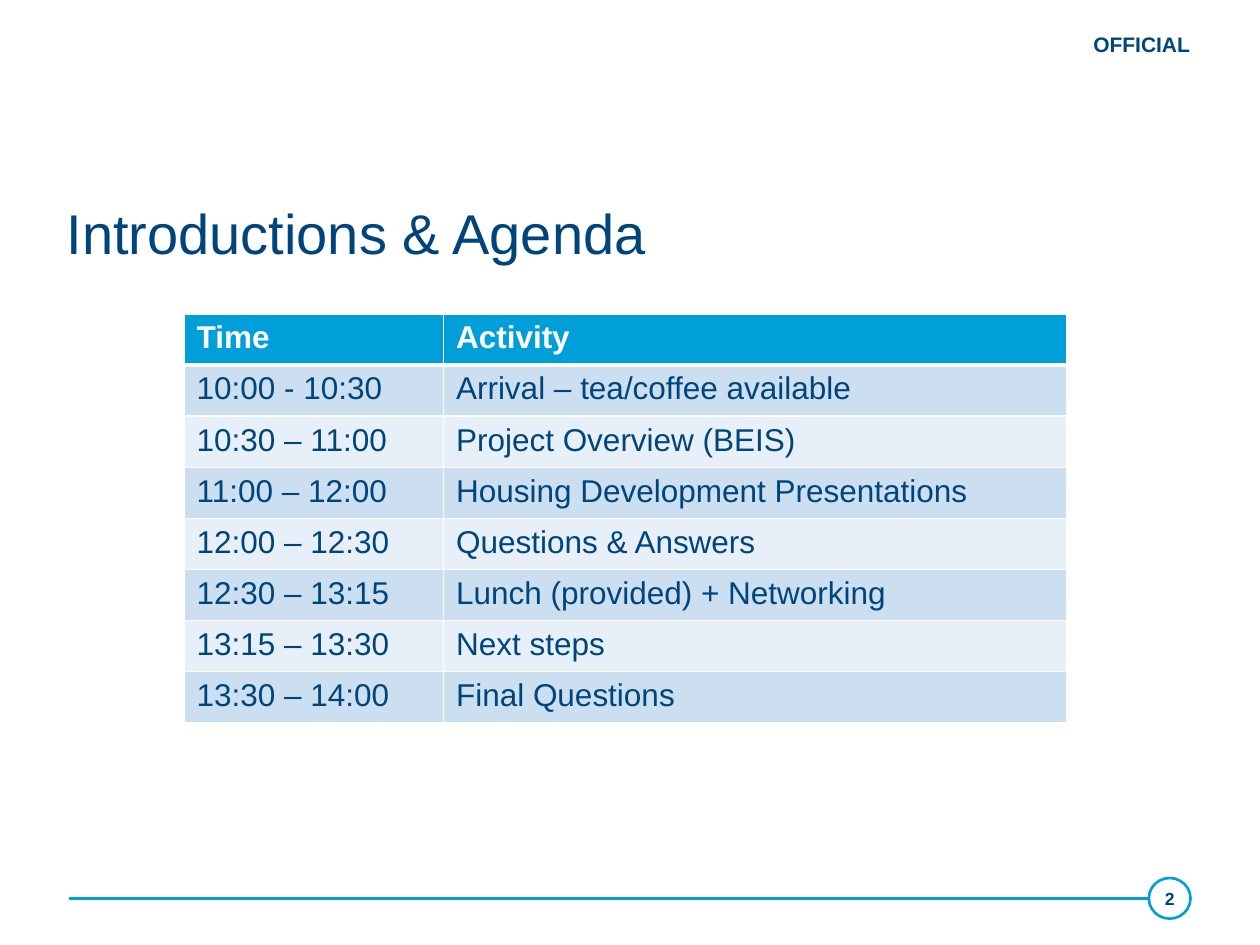
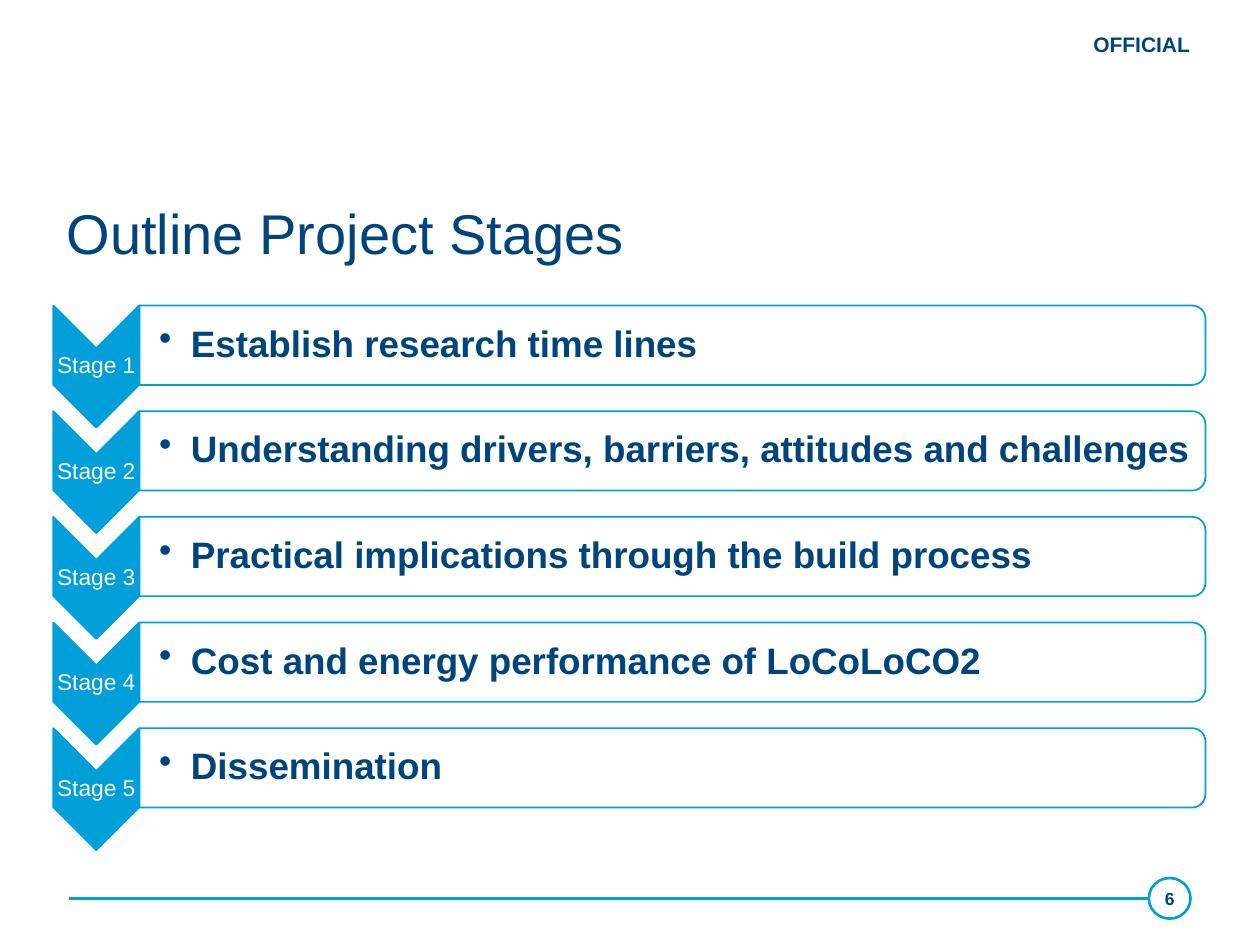
"""Build the agenda and project stages slides."""
from lxml import etree
from pptx import Presentation
from pptx.dml.color import RGBColor
from pptx.enum.shapes import MSO_CONNECTOR as Connector, MSO_SHAPE as Shape
from pptx.enum.text import MSO_ANCHOR as Anchor, MSO_AUTO_SIZE as AutoSize, PP_ALIGN as Align
from pptx.oxml.ns import qn
from pptx.util import Cm, Pt

COLOURS = {"navy": "00447C", "cyan": "009FDA", "white": "FFFFFF",
           "band": "CCDFF1", "pale": "E7F0F8"}
FONT = "Arial"
MARKING = "OFFICIAL"

AGENDA_TITLE, AGENDA_NUMBER = "Introductions & Agenda", "2"
AGENDA = [
    ("Time", "Activity"),
    ("10:00 - 10:30", "Arrival – tea/coffee available"),
    ("10:30 – 11:00", "Project Overview (BEIS)"),
    ("11:00 – 12:00", "Housing Development Presentations"),
    ("12:00 – 12:30", "Questions & Answers"),
    ("12:30 – 13:15", "Lunch (provided) + Networking"),
    ("13:15 – 13:30", "Next steps"),
    ("13:30 – 14:00", "Final Questions"),
]
AGENDA_LEFT, AGENDA_TOP, AGENDA_ROW = 3.71, 6.33, 1.03
AGENDA_WIDTHS = (5.23, 12.57)

STAGES_TITLE, STAGES_NUMBER = "Outline Project Stages", "6"
STAGES = [
    "Establish research time lines",
    "Understanding drivers, barriers, attitudes and challenges",
    "Practical implications through the build process",
    "Cost and energy performance of LoCoLoCO2",
    "Dissemination",
]
STAGE_MIDDLE, STAGE_PITCH = 6.96, 2.13
CHEVRON_MIDDLE, CHEVRON_DROP = 1.94, 0.43
CHEVRON_WIDTH, CHEVRON_LENGTH = 1.73, 2.46
BAR_LEFT, BAR_HEIGHT, BAR_LENGTH = 2.81, 1.6, 21.49
STAGE_INSET, BULLET_INDENT = 0.03, 0.64


def rgb(name):
    return RGBColor.from_string(COLOURS[name])


def style(paragraph, size, colour="navy", bold=False):
    for run in paragraph.runs:
        run.font.name, run.font.size, run.font.bold = FONT, Pt(size), bold
        run.font.color.rgb = rgb(colour)


def add_text(slide, text, box, size, colour="navy", bold=False, align=Align.LEFT,
             anchor=Anchor.MIDDLE, insets=(0.1, 0.13, 0.1, 0.13), wrap=True):
    frame = slide.shapes.add_textbox(*map(Cm, box)).text_frame
    frame.word_wrap, frame.vertical_anchor = wrap, anchor
    frame.margin_left, frame.margin_top, frame.margin_right, frame.margin_bottom = map(Cm, insets)
    frame.text = text
    paragraph = frame.paragraphs[0]
    paragraph.alignment = align
    style(paragraph, size, colour, bold)
    return frame


def add_outline(slide, kind, box, fill, width):
    shape = slide.shapes.add_shape(kind, *map(Cm, box))
    shape.shadow.inherit = False
    if fill:
        shape.fill.solid()
        shape.fill.fore_color.rgb = rgb(fill)
    else:
        shape.fill.background()
    shape.line.color.rgb, shape.line.width = rgb("cyan"), Pt(width)
    return shape


def add_turned(slide, kind, middle_x, middle_y, across, along, fill):
    box = (middle_x - across / 2, middle_y - along / 2, across, along)
    shape = add_outline(slide, kind, box, fill, 1)
    shape.rotation = 90
    return shape


def add_slide(prs, title, number):
    slide = prs.slides.add_slide(prs.slide_layouts[5])
    add_outline(slide, Shape.OVAL, (23.16, 17.7, 0.84, 0.82), None, 1.5)
    rule = slide.shapes.add_connector(Connector.STRAIGHT, Cm(23.16), Cm(18.11), Cm(1.4), Cm(18.11))
    rule.line.color.rgb, rule.line.width = rgb("cyan"), Pt(1.5)
    etree.SubElement(rule._element.spPr, qn("a:effectLst"))
    marking = add_text(slide, MARKING, (21.79, 0.51, 2.49, 0.76), 12, bold=True,
                       anchor=Anchor.TOP, insets=(0.25, 0.13, 0.25, 0.13), wrap=False)
    marking.auto_size = AutoSize.SHAPE_TO_FIT_TEXT
    add_text(slide, number, (23.11, 17.83, 0.94, 0.56), 10, bold=True, align=Align.CENTER)

    heading = slide.shapes.title
    heading.left, heading.top, heading.width, heading.height = map(Cm, (1.09, 3.78, 23.22, 1.98))
    heading.text_frame.text = title
    heading.text_frame.vertical_anchor = Anchor.MIDDLE
    paragraph = heading.text_frame.paragraphs[0]
    paragraph.alignment, paragraph.line_spacing = Align.LEFT, 0.9
    style(paragraph, 32)
    return slide


def add_borders(cell, **widths):
    properties = cell._tc.get_or_add_tcPr()
    for place, side in enumerate("LRTB"):
        border = etree.Element(qn(f"a:ln{side}"), w=str(Pt(widths.get(side, 1))))
        paint = etree.SubElement(border, qn("a:solidFill"))
        etree.SubElement(paint, qn("a:srgbClr"), val=COLOURS["white"])
        properties.insert(place, border)


def add_agenda(slide):
    table = slide.shapes.add_table(
        len(AGENDA), len(AGENDA_WIDTHS), Cm(AGENDA_LEFT), Cm(AGENDA_TOP),
        Cm(sum(AGENDA_WIDTHS)), Cm(AGENDA_ROW * len(AGENDA))).table
    for column, width in zip(table.columns, AGENDA_WIDTHS):
        column.width = Cm(width)
    for index, entry in enumerate(AGENDA):
        table.rows[index].height = Cm(AGENDA_ROW)
        header = index == 0
        fill = "cyan" if header else "band" if index % 2 else "pale"
        for column, text in enumerate(entry):
            cell = table.cell(index, column)
            cell.text = text
            style(cell.text_frame.paragraphs[0], 18, "white" if header else "navy", header)
            cell.fill.solid()
            cell.fill.fore_color.rgb = rgb(fill)
            add_borders(cell, T=3 if index == 1 else 1, B=3 if header else 1)


def add_bullet(paragraph):
    properties = paragraph._p.get_or_add_pPr()
    properties.set("marL", str(Cm(BULLET_INDENT)))
    properties.set("indent", str(-Cm(BULLET_INDENT)))
    etree.SubElement(properties, qn("a:buChar"), char="•")


def add_stage(slide, index, task):
    middle = STAGE_MIDDLE + index * STAGE_PITCH
    chevron_y = middle + CHEVRON_DROP
    add_turned(slide, Shape.CHEVRON, CHEVRON_MIDDLE, chevron_y,
               CHEVRON_LENGTH, CHEVRON_WIDTH, "cyan")
    label_box = (CHEVRON_MIDDLE - CHEVRON_WIDTH / 2, chevron_y - 0.37, CHEVRON_WIDTH, 0.74)
    label = add_text(slide, f"Stage {index + 1}", label_box, 13, "white",
                     align=Align.CENTER, insets=[STAGE_INSET] * 4)
    label.paragraphs[0].line_spacing = 0.9

    bar = add_turned(slide, Shape.ROUND_2_SAME_RECTANGLE, BAR_LEFT + BAR_LENGTH / 2, middle,
                     BAR_HEIGHT, BAR_LENGTH, "white")
    paint = bar._element.spPr.find(qn("a:solidFill"))
    etree.SubElement(paint[0], qn("a:alpha"), val="90000")
    detail = add_text(slide, task, (BAR_LEFT, middle - 0.72, 21.41, 1.44), 21, bold=True,
                      insets=(0.4, STAGE_INSET, STAGE_INSET, STAGE_INSET))
    add_bullet(detail.paragraphs[0])
    detail.paragraphs[0].line_spacing = 0.9


def main():
    prs = Presentation()
    prs.slide_width, prs.slide_height = Cm(25.4), Cm(19.05)
    add_agenda(add_slide(prs, AGENDA_TITLE, AGENDA_NUMBER))
    stages = add_slide(prs, STAGES_TITLE, STAGES_NUMBER)
    for index, task in enumerate(STAGES):
        add_stage(stages, index, task)
    prs.save("out.pptx")


if __name__ == "__main__":
    main()
